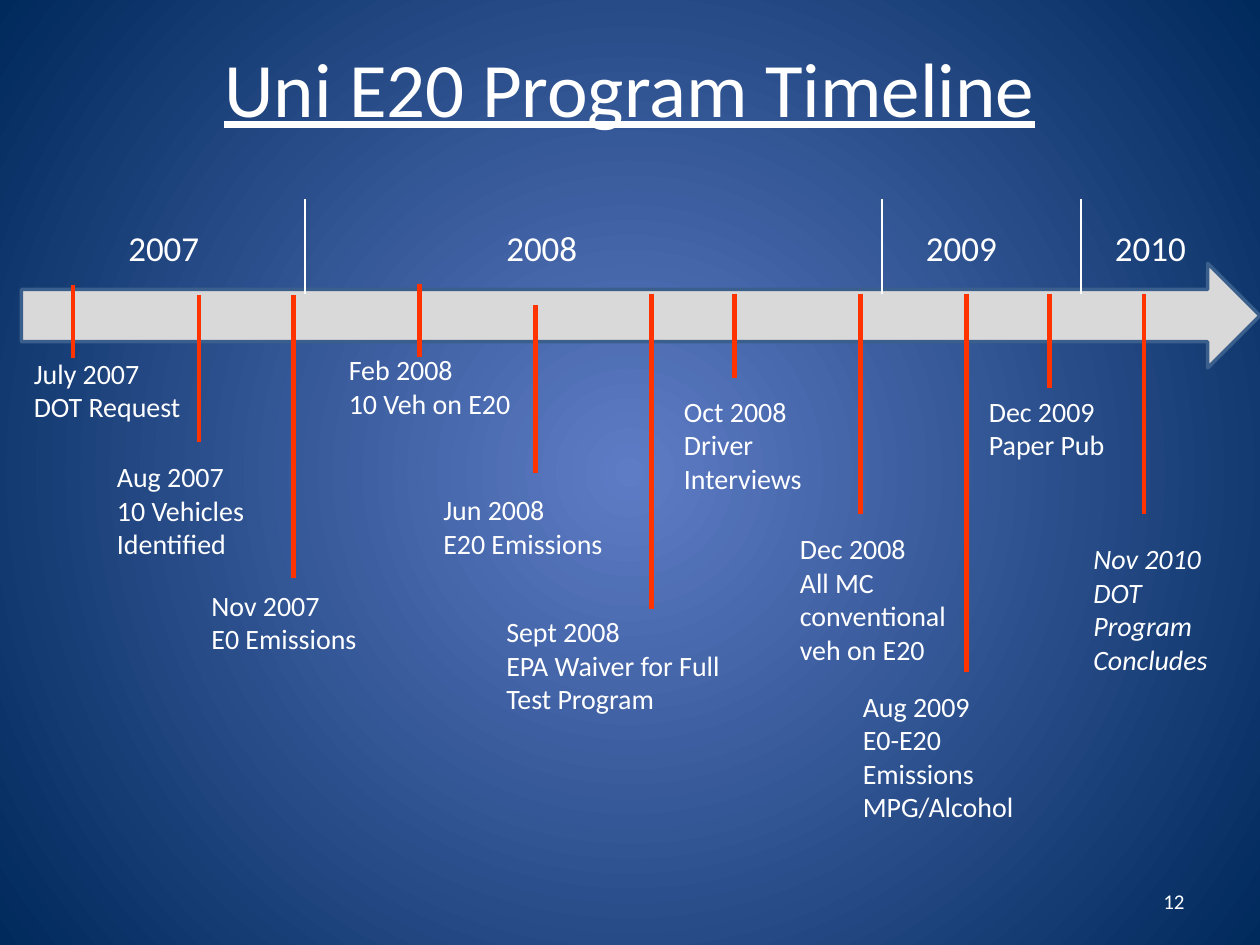
from lxml.etree import SubElement
from pptx import Presentation
from pptx.dml.color import RGBColor
from pptx.enum.shapes import MSO_CONNECTOR, MSO_SHAPE
from pptx.enum.text import MSO_ANCHOR, PP_ALIGN
from pptx.oxml.ns import qn
from pptx.util import Inches, Pt


def color(value):
    return RGBColor.from_string(value)


def add_text(text, left, top, width, height, size=16, align=PP_ALIGN.LEFT,
             anchor=MSO_ANCHOR.TOP, italic=False, underline=False):
    box = slide.shapes.add_textbox(Inches(left), Inches(top), Inches(width), Inches(height))
    frame = box.text_frame
    frame.word_wrap = True
    frame.vertical_anchor = anchor
    frame.text = text
    for paragraph in frame.paragraphs:
        paragraph.alignment = align
        font = paragraph.runs[0].font
        font.name = "Calibri"
        font.size = Pt(size)
        font.italic = italic
        font.underline = underline
        font.color.rgb = color("FFFFFF")


prs = Presentation()
prs.slide_width = Inches(10)
prs.slide_height = Inches(7.5)
slide = prs.slides.add_slide(prs.slide_layouts[6])

backdrop = slide.background.fill
backdrop.gradient()
for stop, position, shade in zip(backdrop.gradient_stops, (0, 1), ("5E7CC5", "00295C")):
    stop.position = position
    stop.color.rgb = color(shade)
gradient = slide.element.find(".//" + qn("a:gradFill"))
gradient.remove(gradient.find(qn("a:lin")))
radial = SubElement(gradient, qn("a:path"), path="circle")
SubElement(radial, qn("a:fillToRect"), l="50000", t="50000", r="50000", b="50000")

add_text("Uni E20 Program Timeline", 0.5, 0.25, 9, 0.87, size=44,
         align=PP_ALIGN.CENTER, anchor=MSO_ANCHOR.MIDDLE, underline=True)

time_arrow = slide.shapes.add_shape(
    MSO_SHAPE.RIGHT_ARROW, Inches(0.17), Inches(2.09), Inches(9.83), Inches(0.83))
time_arrow.shadow.inherit = False
time_arrow.fill.solid()
time_arrow.fill.fore_color.rgb = color("D9D9D9")
time_arrow.line.color.rgb = color("3A5F8C")
time_arrow.line.width = Pt(2)

years = [("2007", 0.92, 1), ("2008", 3.92, 1.5), ("2009", 7.25, 1.25), ("2010", 8.75, 0.92)]
for year, left, width in years:
    add_text(year, left, 1.75, width, 0.44, size=20)

events = [
    ("July 2007\nDOT Request", 0.17, 2.78, 1.58, 0.64),
    ("Aug 2007\n10 Vehicles Identified", 0.83, 3.6, 1.58, 0.91),
    ("Nov 2007\nE0 Emissions", 1.58, 4.62, 1.58, 0.64),
    ("Feb 2008\n10 Veh on E20", 2.67, 2.75, 1.58, 0.64),
    ("Jun 2008\nE20 Emissions", 3.42, 3.86, 1.58, 0.64),
    ("Sept 2008\nEPA Waiver for Full Test Program", 3.92, 4.83, 2, 0.91),
    ("Oct 2008\nDriver Interviews", 5.33, 3.08, 1.25, 0.91),
    ("Dec 2008\nAll MC conventional veh on E20", 6.25, 4.17, 1.58, 1.18),
    ("Aug 2009\nE0-E20 Emissions\nMPG/Alcohol", 6.75, 5.42, 1.5, 1.18),
    ("Dec 2009\nPaper Pub", 7.75, 3.08, 1.17, 0.64),
    ("Nov 2010\nDOT\nProgram\nConcludes", 8.58, 4.25, 1.17, 1.18),
]
for label, left, top, width, height in events:
    add_text(label, left, top, width, height, italic=label.startswith("Nov 2010"))

event_marks = [
    (0.58, 2.26, 2.84), (1.58, 2.34, 3.51), (2.33, 2.34, 4.59), (3.33, 2.25, 2.83),
    (4.25, 2.42, 3.75), (5.17, 2.33, 4.83), (5.83, 2.33, 3), (6.83, 2.33, 4.08),
    (7.67, 2.33, 5.33), (8.33, 2.33, 3.08), (9.08, 2.33, 4.08),
]
marks = [(*mark, "FF3300", 2.5) for mark in event_marks]
marks += [(x, 1.58, 2.33, "FFFFFF", 1.5) for x in (2.42, 7, 8.58)]
for x, top, bottom, shade, weight in marks:
    mark = slide.shapes.add_connector(
        MSO_CONNECTOR.STRAIGHT, Inches(x), Inches(top), Inches(x), Inches(bottom))
    mark.line.color.rgb = color(shade)
    mark.line.width = Pt(weight)
    SubElement(mark.element.spPr, qn("a:effectLst"))

add_text("12", 7.17, 6.95, 2.33, 0.4, size=12,
         align=PP_ALIGN.RIGHT, anchor=MSO_ANCHOR.MIDDLE)

prs.save("out.pptx")
